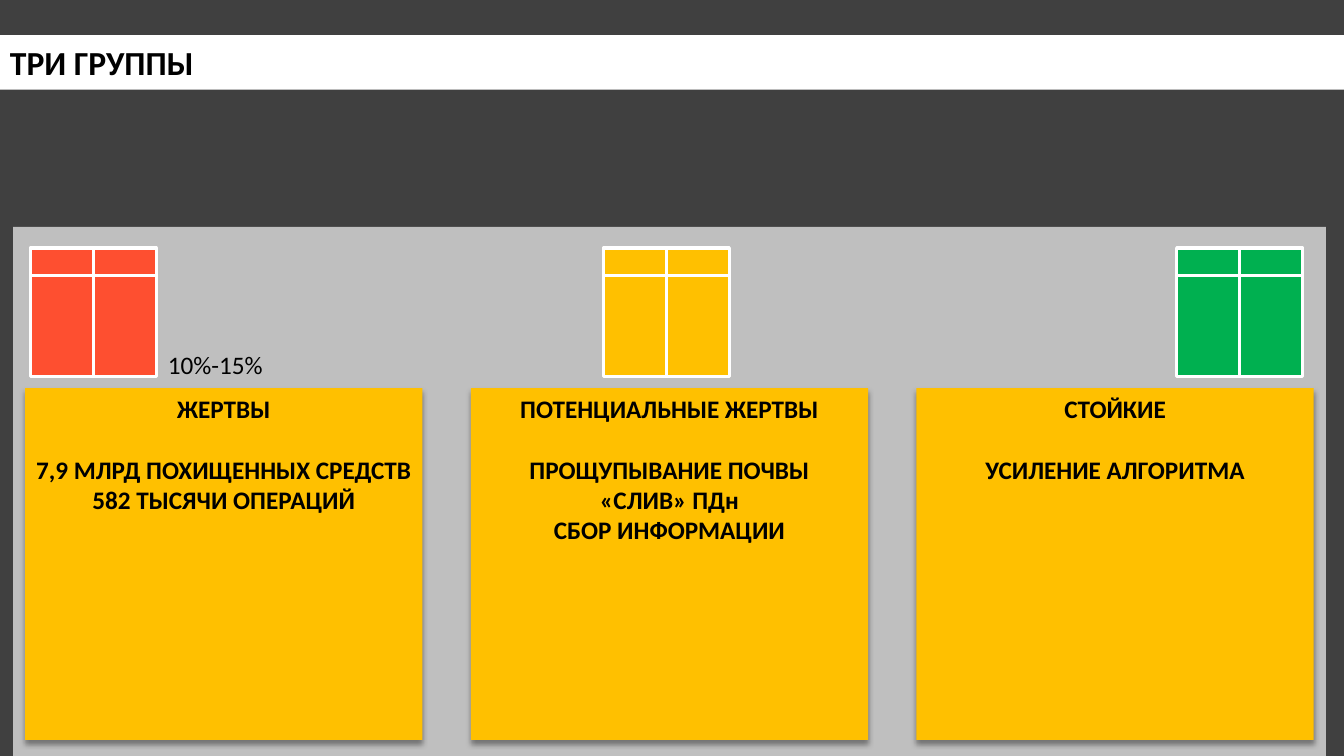
import pptx
import pptx.util
import pptx.dml.color
import pptx.enum.shapes
import pptx.enum.text
import pptx.oxml
import pptx.oxml.ns

Inches, Pt = pptx.util.Inches, pptx.util.Pt
RECTANGLE = pptx.enum.shapes.MSO_SHAPE.RECTANGLE
STRAIGHT = pptx.enum.shapes.MSO_CONNECTOR.STRAIGHT
ALIGN = pptx.enum.text.PP_ALIGN
ANCHOR = pptx.enum.text.MSO_ANCHOR

COLORS = {"back": "404040", "panel": "BFBFBF", "white": "FFFFFF", "black": "000000",
          "red": "FE4F30", "amber": "FFC000", "green": "00B050"}
COLORS = {name: pptx.dml.color.RGBColor.from_string(code) for name, code in COLORS.items()}
A = pptx.oxml.ns.nsdecls("a")
NO_EFFECT = f"<a:effectLst {A}/>"
CARD_SHADOW = (f'<a:effectLst {A}><a:outerShdw blurRad="{Pt(4)}" dist="{Pt(3)}" dir="5400000" '
               'algn="t" rotWithShape="0"><a:srgbClr val="000000"><a:alpha val="40000"/>'
               "</a:srgbClr></a:outerShdw></a:effectLst>")


def add_box(shapes, left, top, width, height, color):
    box = shapes.add_shape(RECTANGLE, Inches(left), Inches(top), Inches(width), Inches(height))
    box.shadow.inherit = False
    box.fill.solid()
    box.fill.fore_color.rgb = COLORS[color]
    box.line.fill.background()
    return box


def write(paragraph, text, size, bold, align):
    paragraph.alignment = align
    run = paragraph.add_run()
    run.text = text
    run.font.name = "Calibri"
    run.font.size = Pt(size)
    run.font.bold = bold
    run.font.color.rgb = COLORS["black"]


WIDTH, HEIGHT = 13.33, 7.5
deck = pptx.Presentation()
deck.slide_width, deck.slide_height = Inches(WIDTH), Inches(HEIGHT)
slide = deck.slides.add_slide(deck.slide_layouts[6])
slide.background.fill.solid()
slide.background.fill.fore_color.rgb = COLORS["back"]

# Title band and grey panel
title = add_box(slide.shapes, 0, 0.35, WIDTH, 0.54, "white")
title.text_frame.vertical_anchor = ANCHOR.MIDDLE
write(title.text_frame.paragraphs[0], "ТРИ ГРУППЫ", 24, True, ALIGN.LEFT)
add_box(slide.shapes, 0.13, 2.25, 13.02, HEIGHT - 2.25, "panel")

# Windows: a pane with a central mullion and a transom
PANE_LEFT, PANE_STEP, PANE_TOP = 0.3, 5.685, 2.46
PANE_WIDTH, PANE_HEIGHT, TRANSOM_DROP = 1.25, 1.28, 0.27
for column, color in enumerate(["red", "amber", "green"]):
    window = slide.shapes.add_group_shape()
    left = PANE_LEFT + column * PANE_STEP
    pane = add_box(window.shapes, left, PANE_TOP, PANE_WIDTH, PANE_HEIGHT, color)
    middle, transom_y = Inches(left + PANE_WIDTH / 2), Inches(PANE_TOP + TRANSOM_DROP)
    mullion = window.shapes.add_connector(
        STRAIGHT, middle, pane.top, middle, pane.top + pane.height)
    mullion.begin_connect(pane, 0)
    mullion.end_connect(pane, 2)
    transom = window.shapes.add_connector(
        STRAIGHT, pane.left, transom_y, pane.left + pane.width, transom_y)
    for bar in (mullion, transom):
        bar._element.spPr.append(pptx.oxml.parse_xml(NO_EFFECT))
    for part in (pane, mullion, transom):
        part.line.color.rgb = COLORS["white"]
        part.line.width = Pt(2.25)

# Cards: a heading, then its facts one line lower
groups = [
    ("ЖЕРТВЫ", ["7,9 МЛРД ПОХИЩЕННЫХ СРЕДСТВ", "582 ТЫСЯЧИ ОПЕРАЦИЙ"]),
    ("ПОТЕНЦИАЛЬНЫЕ ЖЕРТВЫ", ["ПРОЩУПЫВАНИЕ ПОЧВЫ", "«СЛИВ» ПДн", "СБОР ИНФОРМАЦИИ"]),
    ("СТОЙКИЕ", ["УСИЛЕНИЕ АЛГОРИТМА"]),
]
CARD_LEFT, CARD_STEP = 0.25, 4.42
for column, (heading, facts) in enumerate(groups):
    card = add_box(slide.shapes, CARD_LEFT + column * CARD_STEP, 3.85, 3.94, 3.49, "amber")
    properties = card._element.spPr
    properties.replace(properties.find(pptx.oxml.ns.qn("a:effectLst")),
                       pptx.oxml.parse_xml(CARD_SHADOW))
    body = card.text_frame
    body.word_wrap = True
    body.vertical_anchor = ANCHOR.TOP
    write(body.paragraphs[0], heading, 18, True, ALIGN.CENTER)
    body.paragraphs[0].space_after = Pt(22)
    for fact in facts:
        write(body.add_paragraph(), fact, 18, True, ALIGN.CENTER)

# Share of victims
share = slide.shapes.add_textbox(Inches(1.32), Inches(3.42), Inches(1.63), Inches(0.4))
share.text_frame.word_wrap = True
share.text_frame.auto_size = pptx.enum.text.MSO_AUTO_SIZE.SHAPE_TO_FIT_TEXT
write(share.text_frame.paragraphs[0], "10%-15%", 18, False, ALIGN.CENTER)

deck.save("out.pptx")
